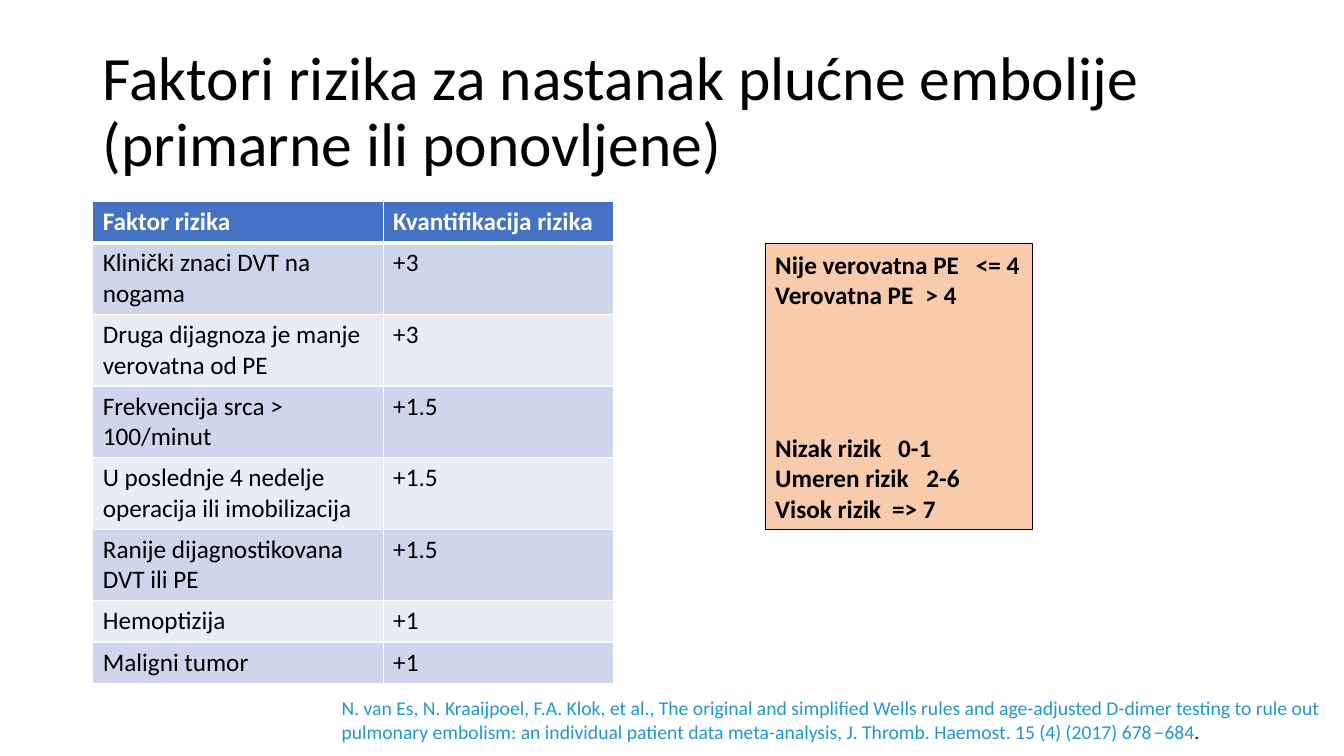
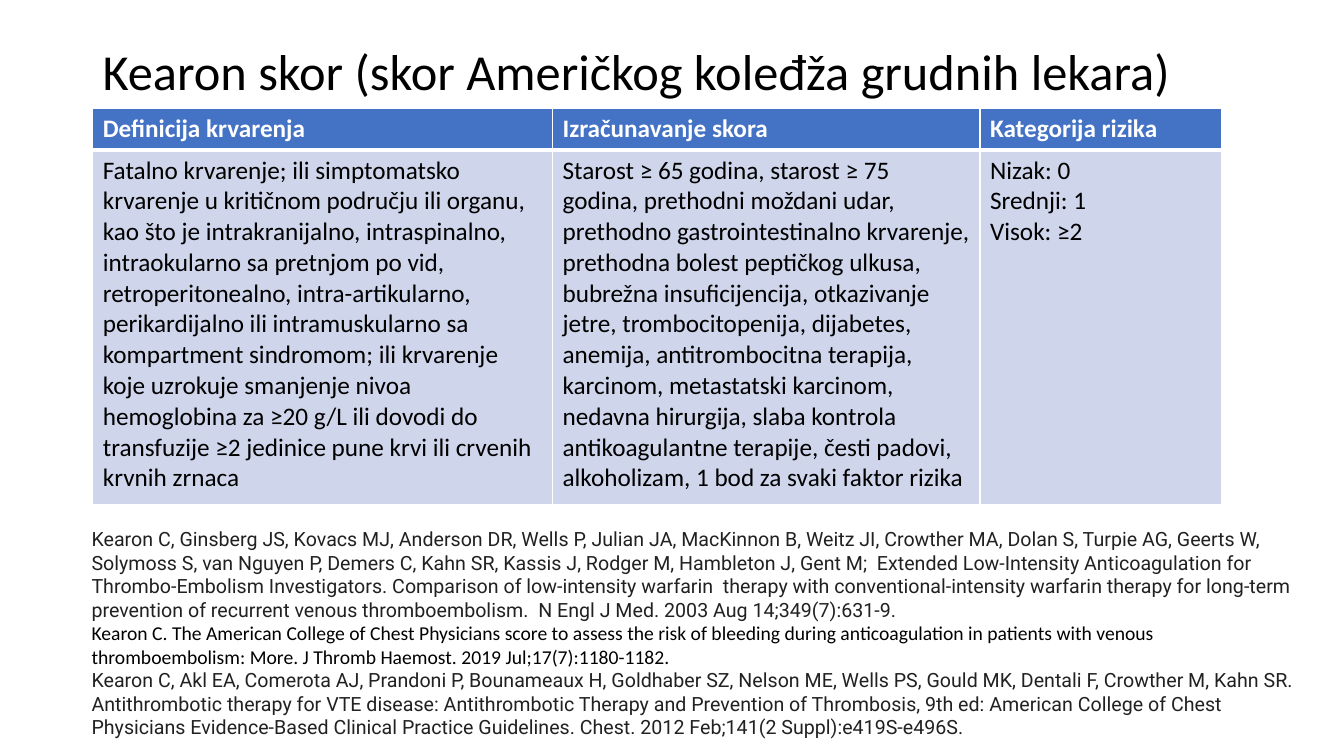
from lxml import etree
from pptx import Presentation, util as u
from pptx.dml.color import RGBColor
from pptx.enum import shapes, text
from pptx.oxml.ns import qn

PX = 9144  # EMU in one px, 100 px to the inch
BLACK, WHITE, HEADER = "000000", "FFFFFF", "4472C4"
BANDS = ("CFD5EA", "E9EBF5")
PEACH, CITATION_BLUE, CITATION_GREY = "F8CBAD", "2196D1", "212121"
BODY = {"name": "Calibri", "size": 18, "bold": False, "color": BLACK}
BOLD = BODY | {"bold": True}
CITATION = BODY | {"size": 14}
JOURNAL = {"name": "Roboto", "color": CITATION_GREY}

RISK_FACTORS = [
    ("Faktor rizika", "Kvantifikacija rizika"),
    ("Klinički znaci DVT na nogama", "+3"),
    ("Druga dijagnoza je manje verovatna od PE", "+3"),
    ("Frekvencija srca > 100/minut", "+1.5"),
    ("U poslednje 4 nedelje operacija ili imobilizacija", "+1.5"),
    ("Ranije dijagnostikovana DVT ili PE", "+1.5"),
    ("Hemoptizija", "+1"),
    ("Maligni tumor", "+1"),
]
# label, value, tab position in px
LIKELIHOOD = [
    ("Nije verovatna PE", "<= 4", 199),
    ("Verovatna PE", "> 4", 149),
]
RISK_LEVELS = [
    ("Nizak rizik", "0-1", 122),
    ("Umeren rizik", "2-6", 150),
    ("Visok rizik", "=> 7", 116),
]
WELLS_CITATION = [
    [("N. van Es, N. Kraaijpoel, F.A. Klok, et al., The original and simplified Wells rules "
      "and age-adjusted D-dimer testing to rule out", {})],
    [("pulmonary embolism: an individual patient data meta-analysis, "
      "J. Thromb. Haemost. 15 (4) (2017) 678", {}),
     ("–", {"name": "Lato"}), ("684", {}), (".", {"color": BLACK})],
]
KEARON_SCORE = [
    ("Definicija krvarenja", "Izračunavanje skora", "Kategorija rizika"),
    ("Fatalno krvarenje; ili simptomatsko krvarenje u kritičnom području ili organu, kao što je "
     "intrakranijalno, intraspinalno, intraokularno sa pretnjom po vid, retroperitonealno, "
     "intra-artikularno, perikardijalno ili intramuskularno sa kompartment sindromom; ili "
     "krvarenje koje uzrokuje smanjenje nivoa hemoglobina za ≥20 g/L ili dovodi do transfuzije "
     "≥2 jedinice pune krvi ili crvenih krvnih zrnaca",
     "Starost ≥ 65 godina, starost ≥ 75 godina, prethodni moždani udar, prethodno "
     "gastrointestinalno krvarenje, prethodna bolest peptičkog ulkusa, bubrežna insuficijencija, "
     "otkazivanje jetre, trombocitopenija, dijabetes, anemija, antitrombocitna terapija, karcinom, "
     "metastatski karcinom, nedavna hirurgija, slaba kontrola antikoagulantne terapije, česti "
     "padovi, alkoholizam, 1 bod za svaki faktor rizika",
     "Nizak: 0\nSrednji: 1\nVisok: ≥2"),
]
KEARON_CITATIONS = [
    [("Kearon C, Ginsberg JS, Kovacs MJ, Anderson DR, Wells P, Julian JA, MacKinnon B, Weitz JI, "
      "Crowther MA, Dolan S, Turpie AG, Geerts W, Solymoss S, van Nguyen P, Demers C, Kahn SR, "
      "Kassis J, Rodger M, Hambleton J, Gent M;  Extended Low-Intensity Anticoagulation for "
      "Thrombo-Embolism Investigators. Comparison of low-intensity warfarin  therapy with "
      "conventional-intensity warfarin therapy for long-term prevention of recurrent venous "
      "thromboembolism.  N Engl J Med. 2003 Aug 14;349(7):631-9.", JOURNAL)],
    [("Kearon C. The American College of Chest Physicians score to assess the risk of bleeding "
      "during anticoagulation in patients with venous thromboembolism: More. "
      "J Thromb Haemost. 2019 Jul;17(7):1180-1182.", {})],
    [("Kearon C, Akl EA, Comerota AJ, Prandoni P, Bounameaux H, Goldhaber SZ, Nelson ME, Wells PS, "
      "Gould MK, Dentali F, Crowther M, Kahn SR. Antithrombotic therapy for VTE disease: "
      "Antithrombotic Therapy and Prevention of Thrombosis, 9th ed: American College of Chest "
      "Physicians Evidence-Based Clinical Practice Guidelines. Chest. "
      "2012 Feb;141(2 Suppl):e419S-e496S.", JOURNAL)],
]


def px(*lengths):
    return [u.Emu(length * PX) for length in lengths]


def rgb(color):
    return RGBColor.from_string(color)


def paint(target, color):
    target.fill.solid()
    target.fill.fore_color.rgb = rgb(color)


def write(frame, paragraphs, style):
    """Fill a frame with paragraphs, each a list of (words, style changes)."""
    frame.word_wrap = True
    for index, runs in enumerate(paragraphs):
        paragraph = frame.paragraphs[0] if index == 0 else frame.add_paragraph()
        for words, changes in runs:
            run = paragraph.add_run()
            run.text = words
            look = style | changes
            values = {"name": look["name"], "size": u.Pt(look["size"]), "bold": look["bold"]}
            for key, value in values.items():
                setattr(run.font, key, value)
            run.font.color.rgb = rgb(look["color"])


def add_text(slide, box, paragraphs, style):
    frame = slide.shapes.add_textbox(*px(*box)).text_frame
    write(frame, paragraphs, style)
    return frame


def add_title(slide, box, words, size):
    frame = add_text(slide, box, [[(words, {})]], BODY | {"size": size})
    frame.vertical_anchor = text.MSO_ANCHOR.MIDDLE
    frame.paragraphs[0].line_spacing = 0.9


def add_borders(cell, row):
    """White rules, thicker between the header and the first body row."""
    thick = {(0, "B"), (1, "T")}
    properties = cell._tc.get_or_add_tcPr()
    for side in "LRTB":
        width = 3 if (row, side) in thick else 1
        line = etree.SubElement(properties, qn(f"a:ln{side}"), w=str(u.Pt(width)))
        fill = etree.SubElement(line, qn("a:solidFill"))
        etree.SubElement(fill, qn("a:srgbClr"), val=WHITE)


def add_banded_table(slide, left, top, widths, heights, rows):
    box = px(left, top, sum(widths), sum(heights))
    table = slide.shapes.add_table(len(rows), len(widths), *box).table
    for column, width in zip(table.columns, px(*widths)):
        column.width = width
    for row, height in zip(table.rows, px(*heights)):
        row.height = height
    for r, entries in enumerate(rows):
        style = BODY if r else BOLD | {"color": WHITE}
        for c, entry in enumerate(entries):
            cell = table.cell(r, c)
            add_borders(cell, r)
            paint(cell, BANDS[(r - 1) % 2] if r else HEADER)
            write(cell.text_frame, [[(line, {})] for line in entry.split("\n")], style)


def add_risk_box(slide, box):
    panel = slide.shapes.add_shape(shapes.MSO_SHAPE.RECTANGLE, *px(*box))
    panel.shadow.inherit = False
    paint(panel, PEACH)
    panel.line.color.rgb = rgb(BLACK)
    panel.line.width = u.Pt(0.75)
    frame = panel.text_frame
    frame.margin_right = 0
    frame.vertical_anchor = text.MSO_ANCHOR.TOP
    entries = LIKELIHOOD + RISK_LEVELS
    write(frame, [[(f"{label}\t{value}", {})] for label, value, _ in entries], BOLD)
    for paragraph, (_, _, stop) in zip(frame.paragraphs, entries):
        paragraph.alignment = text.PP_ALIGN.LEFT
        stops = etree.SubElement(paragraph._p.get_or_add_pPr(), qn("a:tabLst"))
        etree.SubElement(stops, qn("a:tab"), pos=str(stop * PX), algn="l")
    frame.paragraphs[len(LIKELIHOOD)].space_before = u.Pt(88)


def build_risk_factors(slide):
    add_title(slide, (92, 40, 1150, 145),
              "Faktori rizika za nastanak plućne embolije (primarne ili ponovljene)", 44)
    heights = [41] + [71] * 5 + [41] * 2
    add_banded_table(slide, 92, 200, (288, 229), heights, RISK_FACTORS)
    add_risk_box(slide, (759, 242, 265, 283))
    add_text(slide, (329, 686, 1004, 57), WELLS_CITATION, CITATION | {"color": CITATION_BLUE})


def build_kearon_score(slide):
    add_title(slide, (92, 40, 1206, 68), "Kearon skor (skor Američkog koleđža grudnih lekara)", 36)
    add_banded_table(slide, 92, 108, (456, 424, 240), (41, 352), KEARON_SCORE)
    add_text(slide, (81, 518, 1217, 222), KEARON_CITATIONS, CITATION)


def main():
    deck = Presentation()
    deck.slide_width, deck.slide_height = px(1333, 750)
    for build in (build_risk_factors, build_kearon_score):
        build(deck.slides.add_slide(deck.slide_layouts[6]))
    deck.save("out.pptx")


if __name__ == "__main__":
    main()
